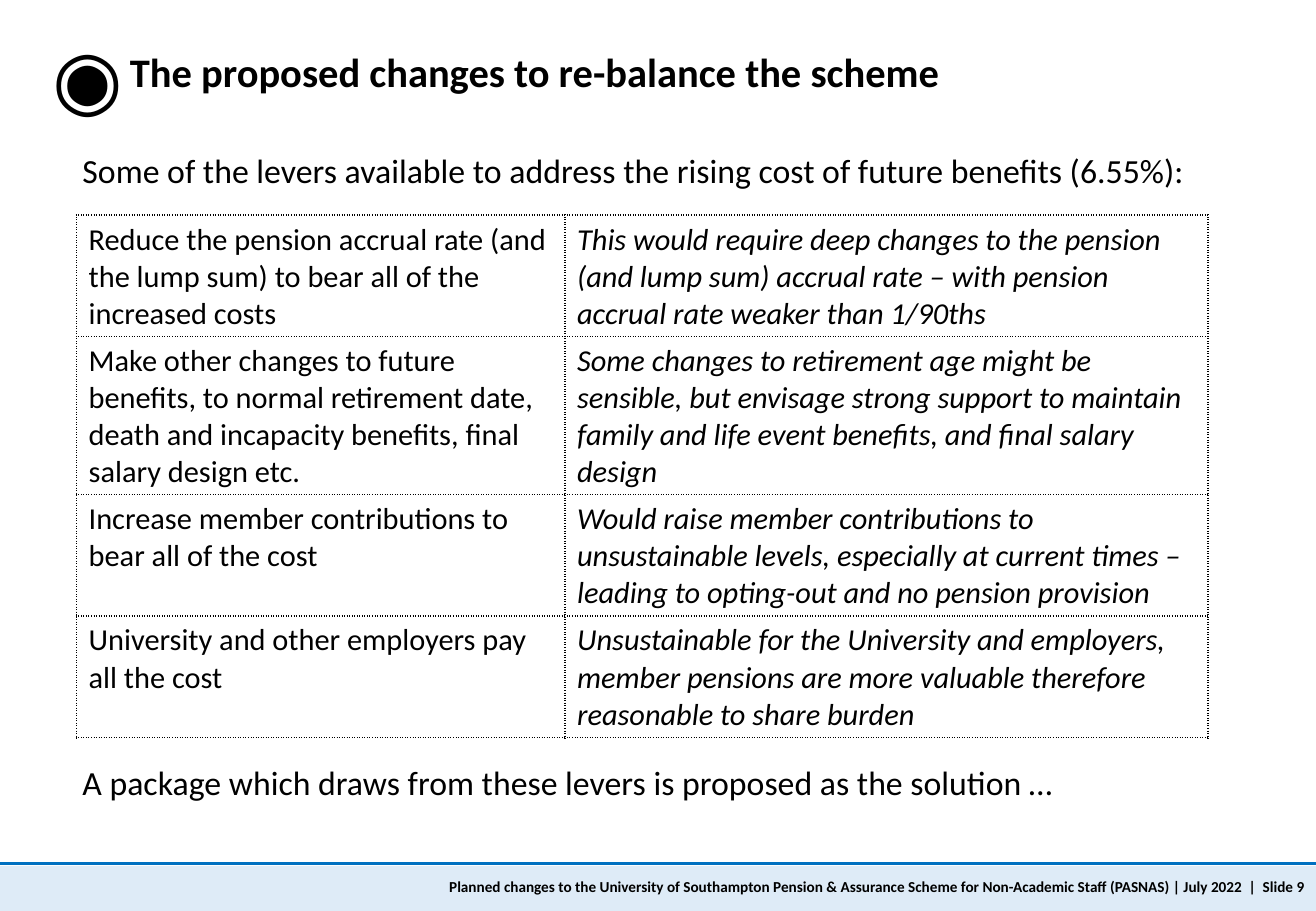
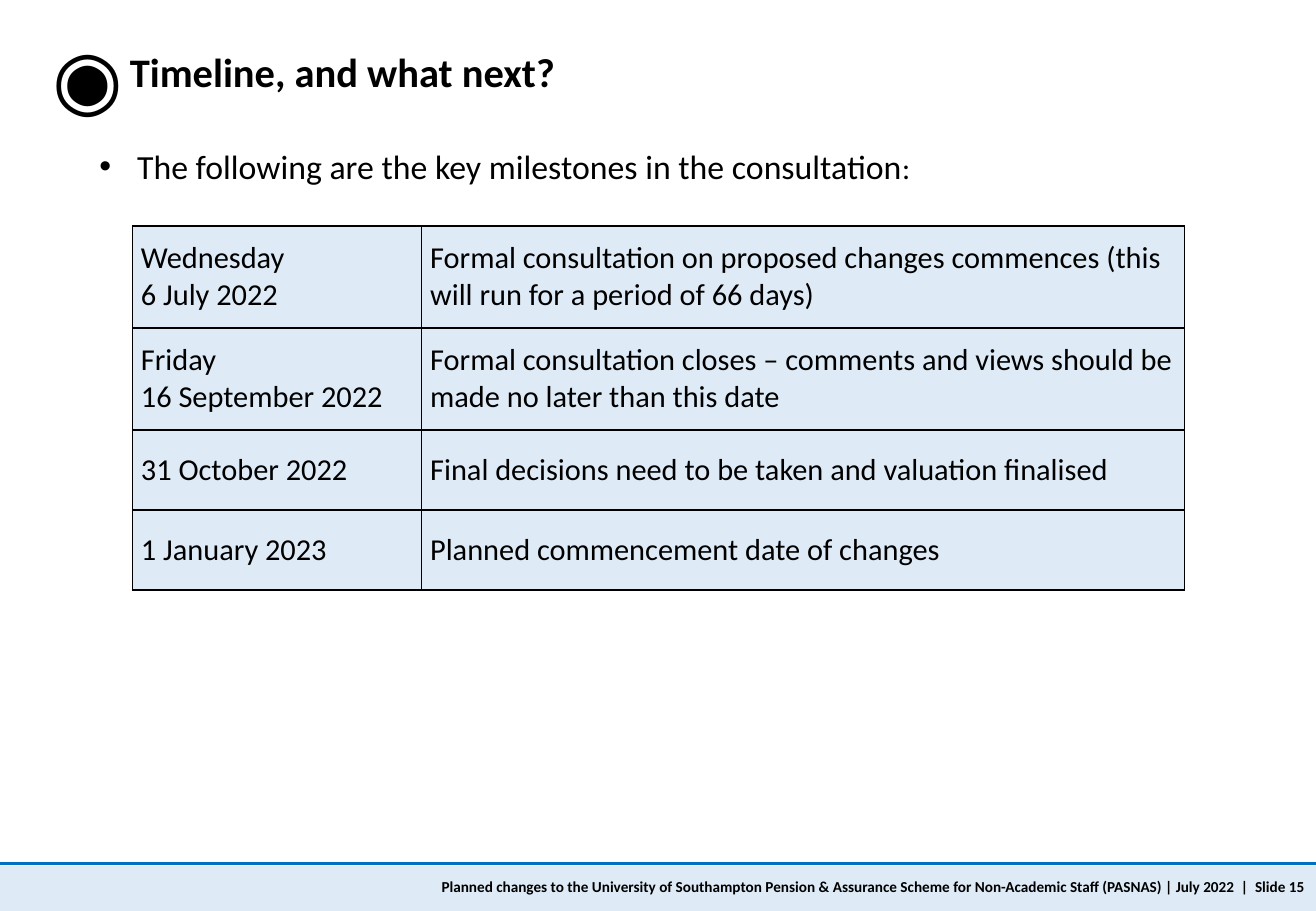
from lxml import etree
from pptx import Presentation
from pptx.dml.color import RGBColor
from pptx.enum.shapes import MSO_CONNECTOR, MSO_SHAPE
from pptx.enum.text import MSO_ANCHOR as ANCHOR, PP_ALIGN as ALIGN
from pptx.oxml.ns import qn
from pptx.util import Inches, Pt

WIDTH, HEIGHT = 10.83, 7.5
BLACK, PALE, BLUE = "000000", "DEEBF7", "0070C0"
FOOTER = ("Planned changes to the University of Southampton Pension & Assurance "
          "Scheme for Non-Academic Staff (PASNAS) | July 2022  |  Slide {}")


def rgb(value):
    return RGBColor.from_string(value)


def add_text(p, text, size=18, bold=False, italic=False, color=BLACK):
    r = p.add_run()
    r.text = text
    f = r.font
    f.name, f.size, f.bold, f.italic = "Calibri", Pt(size), bold, italic
    f.color.rgb = rgb(color)


def add_bullet(p, indent):
    pPr = p._p.get_or_add_pPr()
    pPr.set("marL", str(Inches(indent)))
    pPr.set("indent", str(-Inches(indent)))
    etree.SubElement(pPr, qn("a:buFont"), typeface="Arial")
    etree.SubElement(pPr, qn("a:buChar"), char="•")


def add_borders(cell, dash):
    tcPr = cell._tc.get_or_add_tcPr()
    for i, side in enumerate("LRTB"):
        ln = etree.Element(qn(f"a:ln{side}"), w=str(Pt(1)))
        fill = etree.SubElement(ln, qn("a:solidFill"))
        etree.SubElement(fill, qn("a:srgbClr"), val=BLACK)
        etree.SubElement(ln, qn("a:prstDash"), val=dash)
        tcPr.insert(i, ln)


class Deck:
    def __init__(self):
        self.prs = Presentation()
        self.prs.slide_width, self.prs.slide_height = Inches(WIDTH), Inches(HEIGHT)
        self.s = None

    def slide(self, title, number):
        self.s = self.prs.slides.add_slide(self.prs.slide_layouts[6])
        self.footer(number)
        self.text(0.97, 0.34, 7.86, 0.5, title, size=24, bold=True)
        self.text(0.33, 0.39, 0.5, 0.45, "◉", align=ALIGN.CENTER,
                  anchor=ANCHOR.MIDDLE, size=48)

    def footer(self, number):
        top = 7.13
        sp = self.s.shapes.add_shape(MSO_SHAPE.RECTANGLE, 0, Inches(top),
                                     Inches(WIDTH), Inches(HEIGHT - top))
        sp.shadow.inherit = False
        sp.fill.solid()
        sp.fill.fore_color.rgb = rgb(PALE)
        sp.line.fill.background()
        self.text(1.2, 7.19, 9.63, 0.22, FOOTER.format(number), align=ALIGN.RIGHT,
                  anchor=ANCHOR.MIDDLE, size=9, bold=True)
        self.line(0, 7.11, WIDTH, 7.11)

    def line(self, x1, y1, x2, y2):
        cn = self.s.shapes.add_connector(MSO_CONNECTOR.STRAIGHT, Inches(x1),
                                         Inches(y1), Inches(x2), Inches(y2))
        cn.line.color.rgb = rgb(BLUE)
        cn.line.width = Pt(2.25)
        etree.SubElement(cn._element.spPr, qn("a:effectLst"))

    def text(self, x, y, w, h, text, align=ALIGN.LEFT, anchor=ANCHOR.TOP,
             bullet=None, **fmt):
        sp = self.s.shapes.add_textbox(Inches(x), Inches(y), Inches(w), Inches(h))
        tf = sp.text_frame
        tf.word_wrap = True
        tf.vertical_anchor = anchor
        p = tf.paragraphs[0]
        if bullet:
            add_bullet(p, bullet)
        p.alignment = align
        add_text(p, text, **fmt)
        return p

    def table(self, x, y, cols, heights, rows, fill=None, dash="solid",
              anchor=ANCHOR.TOP, margins=(0.1, 0.05), italic_col=None):
        frame = self.s.shapes.add_table(len(rows), len(cols), Inches(x), Inches(y),
                                        Inches(sum(cols)), Inches(sum(heights)))
        table = frame.table
        table.first_row = table.horz_banding = False
        for col, width in zip(table.columns, cols):
            col.width = Inches(width)
        for row, height, texts in zip(table.rows, heights, rows):
            row.height = Inches(height)
            for i, (cell, text) in enumerate(zip(row.cells, texts)):
                cell.vertical_anchor = anchor
                cell.margin_left = cell.margin_right = Inches(margins[0])
                cell.margin_top = cell.margin_bottom = Inches(margins[1])
                if fill:
                    cell.fill.solid()
                    cell.fill.fore_color.rgb = rgb(fill)
                else:
                    cell.fill.background()
                add_borders(cell, dash)
                tf = cell.text_frame
                for n, part in enumerate(text.split("\n")):
                    p = tf.add_paragraph() if n else tf.paragraphs[0]
                    add_text(p, part, italic=i == italic_col)


def levers_slide(deck):
    deck.slide("The proposed changes to re-balance the scheme", 9)
    deck.text(0.58, 1.18, 9.41, 0.44, "Some of the levers available to address "
              "the rising cost of future benefits (6.55%):", size=20)
    levers = [
        ("Reduce the pension accrual rate (and the lump sum) to bear all of the "
         "increased costs",
         "This would require deep changes to the pension (and lump sum) accrual "
         "rate – with pension accrual rate weaker than 1/90ths"),
        ("Make other changes to future benefits, to normal retirement date, death "
         "and incapacity benefits, final salary design etc.",
         "Some changes to retirement age might be sensible, but envisage strong "
         "support to maintain family and life event benefits, and final salary "
         "design"),
        ("Increase member contributions to bear all of the cost",
         "Would raise member contributions to unsustainable levels, especially at "
         "current times – leading to opting-out and no pension provision"),
        ("University and other employers pay all the cost",
         "Unsustainable for the University and employers, member pensions are more "
         "valuable therefore reasonable to share burden"),
    ]
    deck.table(0.63, 1.77, [4.02, 5.29], [1, 1.3, 1, 1], levers,
               dash="sysDot", italic_col=1)
    deck.text(0.58, 6.22, 8.94, 0.44, "A package which draws from these levers is "
              "proposed as the solution …", size=20)


def timeline_slide(deck):
    deck.slide("Timeline, and what next?", 15)
    p = deck.text(0.72, 1.15, 9.02, 0.44, "The following are the key milestones "
                  "in the consultation", bullet=0.31, size=20)
    add_text(p, ":")
    milestones = [
        ("Wednesday\n6 July 2022",
         "Formal consultation on proposed changes commences (this will run for a "
         "period of 66 days)"),
        ("Friday\n16 September 2022",
         "Formal consultation closes – comments and views should be made no later "
         "than this date"),
        ("31 October 2022", "Final decisions need to be taken and valuation finalised"),
        ("1 January 2023", "Planned commencement date of changes"),
    ]
    deck.table(1.09, 1.86, [2.38, 6.28], [0.84, 0.84, 0.66, 0.66], milestones,
               fill=PALE, anchor=ANCHOR.MIDDLE, margins=(0.07, 0))


def main():
    deck = Deck()
    levers_slide(deck)
    timeline_slide(deck)
    deck.prs.save("out.pptx")


if __name__ == "__main__":
    main()
